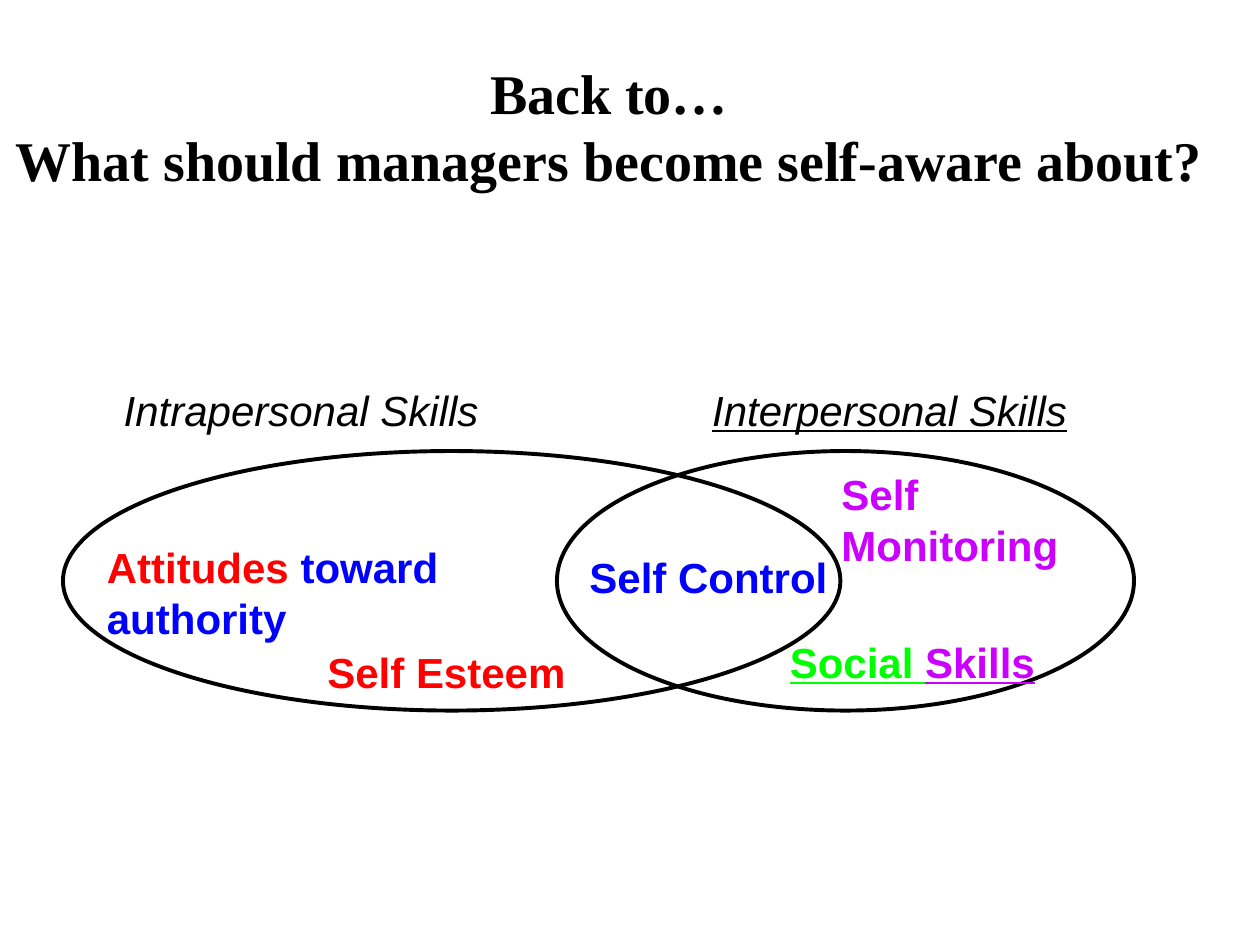
"""Build a slide with two overlapping ellipses of self-awareness skills."""
from pptx import Presentation
from pptx.dml.color import RGBColor
from pptx.enum.shapes import MSO_SHAPE
from pptx.enum.text import MSO_ANCHOR, PP_ALIGN
from pptx.util import Inches, Pt

ELLIPSE = MSO_SHAPE.OVAL
TOP, MIDDLE = MSO_ANCHOR.TOP, MSO_ANCHOR.MIDDLE
LEFT, CENTER = PP_ALIGN.LEFT, PP_ALIGN.CENTER

COLORS = {
    "black": "000000",
    "blue": "0000FF",
    "purple": "CC00FF",
    "green": "00FF00",
    "red": "FF0000",
}

TITLE = [
    [("Back to…", "black")],
    [("What should managers become self-aware about?", "black")],
]
HEADINGS = [
    ("Intrapersonal Skills", 0.58, False),
    ("Interpersonal Skills", 5.25, True),
]
ELLIPSES = [(0.5, 6.17), (4.42, 4.58)]
SKILLS = [
    ([[("Self Control", "blue")]], (4.58, 4.33, 2.5, 0.5), False),
    ([[("Self Monitoring", "purple")]], (6.58, 3.67, 2.5, 0.91), False),
    ([[("Social ", "green"), ("Skills", "purple")]], (6.17, 5, 2.5, 0.5), True),
    ([[("Self Esteem", "red")]], (2.5, 5.08, 2.5, 0.5), False),
    ([[("Attitudes ", "red"), ("toward", "blue")], [("authority", "blue")]],
     (0.75, 4.25, 4.42, 0.91), False),
]


def add_text(slide, paragraphs, box, font="Arial", size=24, align=LEFT, anchor=TOP,
             bold=False, italic=False, underline=False):
    shape = slide.shapes.add_textbox(*map(Inches, box))
    frame = shape.text_frame
    frame.word_wrap = True
    frame.vertical_anchor = anchor
    for index, runs in enumerate(paragraphs):
        paragraph = frame.add_paragraph() if index else frame.paragraphs[0]
        paragraph.alignment = align
        for text, color in runs:
            run = paragraph.add_run()
            run.text = text
            run.font.name = font
            run.font.size = Pt(size)
            run.font.bold = bold
            run.font.italic = italic
            run.font.underline = underline
            run.font.color.rgb = RGBColor.from_string(COLORS[color])


def add_ellipse(slide, left, width):
    shape = slide.shapes.add_shape(
        ELLIPSE, Inches(left), Inches(3.58), Inches(width), Inches(2.06))
    shape.shadow.inherit = False
    shape.fill.background()
    shape.line.color.rgb = RGBColor.from_string(COLORS["black"])
    shape.line.width = Pt(2.25)


def main():
    presentation = Presentation()
    presentation.slide_width = Inches(10)
    presentation.slide_height = Inches(7.5)
    slide = presentation.slides.add_slide(presentation.slide_layouts[6])

    add_text(slide, TITLE, (0, 0.5, 9.67, 1), font="Times New Roman", size=32,
             align=CENTER, anchor=MIDDLE, bold=True)
    for left, width in ELLIPSES:
        add_ellipse(slide, left, width)
    for text, left, underline in HEADINGS:
        add_text(slide, [[(text, "black")]], (left, 3, 3.62, 0.5),
                 align=CENTER, italic=True, underline=underline)
    for paragraphs, box, underline in SKILLS:
        add_text(slide, paragraphs, box, bold=True, underline=underline)

    presentation.save("out.pptx")


if __name__ == "__main__":
    main()
